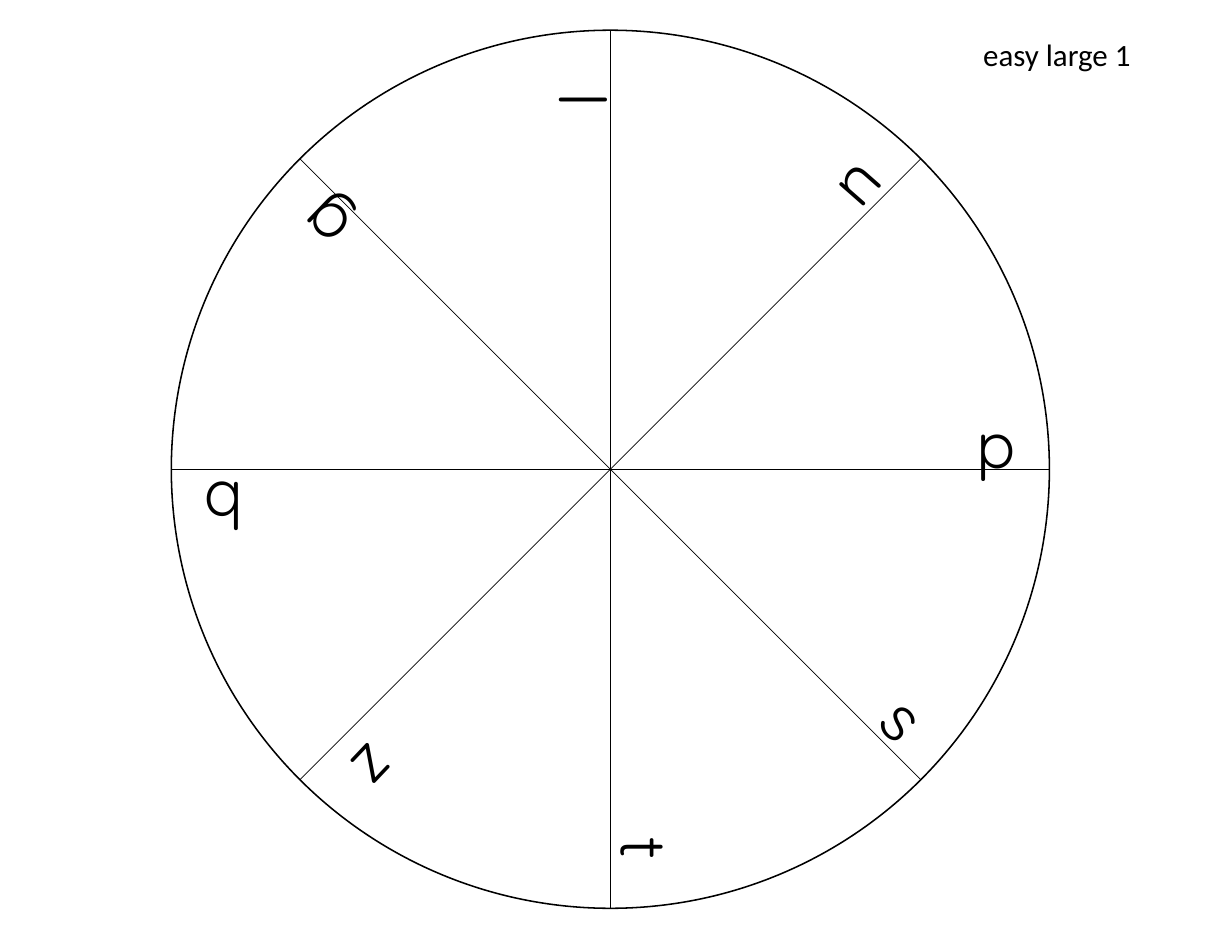
"""Draw a letter wheel with eight sectors."""
from math import cos, pi, sin

from lxml.etree import SubElement
from pptx import Presentation
from pptx.dml.color import RGBColor
from pptx.enum.shapes import MSO_CONNECTOR as Link, MSO_SHAPE as Shape
from pptx.enum.text import MSO_AUTO_SIZE as Fit
from pptx.oxml.ns import qn
from pptx.util import Inches, Pt

BLACK = RGBColor(0, 0, 0)
MID_X, MID_Y, RADIUS = 5.45, 4.19, 3.92
BOX = (0.47, 0.81)
GLYPH = {"name": "Quicksand", "size": Pt(41.9)}
LABEL = {"name": "Calibri", "size": Pt(19.9)}
LETTERS = [
    ("p", 8.62, 3.55, 0),
    ("s", 7.84, 6, 45.7),
    ("t", 5.53, 7.21, 90),
    ("z", 3.13, 6.46, 133.5),
    ("b", 1.8, 4.13, 180),
    ("g", 2.68, 1.64, 224),
    ("l", 4.96, 0.42, 270),
    ("n", 7.37, 1.22, 311.3),
]


def set_line(item, width):
    item.line.color.rgb = BLACK
    item.line.width = Pt(width)


def add_rim(shapes):
    spot = (MID_X - RADIUS, MID_Y - RADIUS, 2 * RADIUS, 2 * RADIUS)
    rim = shapes.add_shape(Shape.OVAL, *map(Inches, spot))
    rim.shadow.inherit = False
    rim.fill.background()
    set_line(rim, 1)


def add_spoke(shapes, angle):
    dx, dy = RADIUS * cos(angle), RADIUS * sin(angle)
    ends = (MID_X - dx, MID_Y - dy, MID_X + dx, MID_Y + dy)
    spoke = shapes.add_connector(Link.STRAIGHT, *map(Inches, ends))
    set_line(spoke, 0.5)
    SubElement(spoke._element.spPr, qn("a:effectLst"))


def add_text(shapes, text, spot, style, turn=0):
    box = shapes.add_textbox(*map(Inches, spot))
    box.rotation = turn
    frame = box.text_frame
    frame.word_wrap = True
    frame.auto_size = Fit.SHAPE_TO_FIT_TEXT
    run = frame.paragraphs[0].add_run()
    run.text = text
    run.font.color.rgb = BLACK
    for key, value in style.items():
        setattr(run.font, key, value)


def main():
    deck = Presentation()
    deck.slide_width, deck.slide_height = Inches(11), Inches(8.5)
    slide = deck.slides.add_slide(deck.slide_layouts[6])
    wheel = slide.shapes.add_group_shape().shapes
    add_rim(wheel)
    for step in range(4):
        add_spoke(wheel, step * pi / 4)
    ring = slide.shapes.add_group_shape().shapes
    for text, left, top, turn in LETTERS:
        add_text(ring, text, (left, top, *BOX), GLYPH, turn)
    add_text(slide.shapes, "easy large 1", (8.68, 0.27, 1.83, 0.44), LABEL)
    deck.save("out.pptx")


if __name__ == "__main__":
    main()
